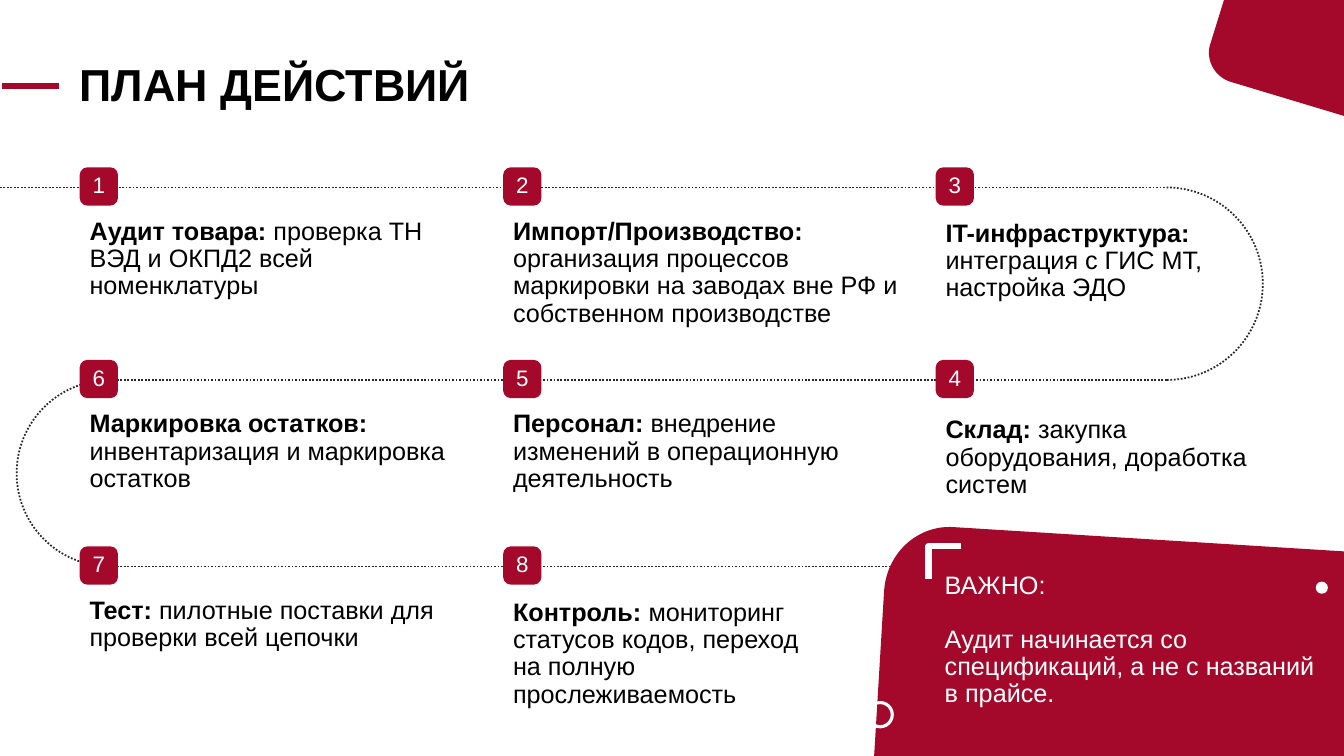
from dataclasses import dataclass

from lxml import etree
from pptx import Presentation
from pptx import util as u
from pptx.dml.color import RGBColor
from pptx.enum import dml, shapes, text
from pptx.oxml import ns


@dataclass(frozen=True)
class Theme:
    accent: RGBColor = RGBColor(0xA4, 0x09, 0x2B)
    ink: RGBColor = RGBColor(0, 0, 0)
    route: RGBColor = RGBColor(0x26, 0x26, 0x26)
    white: RGBColor = RGBColor(0xFF, 0xFF, 0xFF)
    font: str = "Arial"
    title_size: int = 32
    body_size: int = 18
    badge_size: int = 16
    spacing: float = 0.9


THEME = Theme()
WIDTH, HEIGHT = 13.33, 7.5
COLUMNS = (0.79, 4.99, 9.28)
ROWS = (1.66, 3.57, 5.42)
BADGE = 0.38
ROUTE_DROP = 0.2
ROUTE_RIGHT, ROUTE_LEFT = 11.57, 1.09  # centres of the two turns

# number, column, row, caption drop, caption width, heading, details
STEPS = (
    (1, 0, 0, 0.46, 3.98, "Аудит товара:", "проверка ТН ВЭД и ОКПД2 всей номенклатуры"),
    (2, 1, 0, 0.46, 4.18, "Импорт/Производство:",
     "организация процессов маркировки на заводах вне РФ и собственном производстве"),
    (3, 2, 0, 0.48, 3.02, "IT-инфраструктура:", "интеграция с ГИС МТ, настройка ЭДО"),
    (4, 2, 1, 0.52, 3.26, "Склад:", "закупка оборудования, доработка систем"),
    (5, 1, 1, 0.46, 3.94, "Персонал:", "внедрение изменений в операционную деятельность"),
    (6, 0, 1, 0.46, 3.83, "Маркировка остатков:", "инвентаризация и маркировка остатков"),
    (7, 0, 2, 0.46, 3.83, "Тест:", "пилотные поставки для проверки всей цепочки"),
    (8, 1, 2, 0.48, 3.35, "Контроль:",
     "мониторинг статусов кодов, переход на полную прослеживаемость"),
)


def box_of(*lengths):
    return [u.Inches(length) for length in lengths]


def place(shape, *box):
    shape.left, shape.top, shape.width, shape.height = box_of(*box)


def paint(shape, fill=None, line=None, weight=1.0, dash=None):
    shape.shadow.inherit = False
    if fill is None:
        shape.fill.background()
    else:
        shape.fill.solid()
        shape.fill.fore_color.rgb = fill
    if line is None:
        shape.line.fill.background()
    else:
        style_line(shape.line, line, weight, dash)


def style_line(line, color, weight, dash=None):
    line.color.rgb = color
    line.width = u.Pt(weight)
    if dash:
        line.dash_style = dash


def write(paragraph, words, size, color, bold=False):
    paragraph.text = words
    paragraph.line_spacing = THEME.spacing
    paragraph.space_before = u.Pt(0)
    style_run(paragraph.runs[0], size, color, bold)


def style_run(run, size, color, bold=False):
    run.font.name = THEME.font
    run.font.size = u.Pt(size)
    run.font.color.rgb = color
    run.font.bold = bold


def add_line(slide, start, end, color, weight, dash=None):
    line = slide.shapes.add_connector(shapes.MSO_CONNECTOR.STRAIGHT, *box_of(*start, *end))
    style_line(line.line, color, weight, dash)
    etree.SubElement(line._element.spPr, ns.qn("a:effectLst"))


def add_outline(slide, points, close=True):
    start, *rest = [tuple(box_of(*point)) for point in points]
    builder = slide.shapes.build_freeform(*start)
    builder.add_line_segments(rest, close=close)
    return builder.convert_to_shape()


def curve(a, b, c, d, steps=24):
    """Points along a cubic curve from a to d."""
    points = []
    for i in range(steps + 1):
        t = i / steps
        weights = ((1 - t) ** 3, 3 * t * (1 - t) ** 2, 3 * t * t * (1 - t), t ** 3)
        points.append(tuple(sum(w * p[axis] for w, p in zip(weights, (a, b, c, d)))
                            for axis in (0, 1)))
    return points


def add_route(slide):
    """Dotted path that winds through the three rows."""
    dash = dml.MSO_LINE.ROUND_DOT
    levels = [row + ROUTE_DROP for row in ROWS]
    for y, left, right in zip(levels, (0, ROUTE_LEFT, ROUTE_LEFT), (ROUTE_RIGHT, ROUTE_RIGHT, 9.22)):
        add_line(slide, (left, y), (right, y), THEME.route, 1.25, dash)
    # An arc angle unit here is 100000 / 60000 of a degree
    turns = ((ROUTE_RIGHT, levels[0], levels[1], 162, 54),
             (ROUTE_LEFT, levels[1], levels[2], 54, 162))
    for center, top, bottom, begin, finish in turns:
        size = bottom - top
        turn = slide.shapes.add_shape(
            shapes.MSO_SHAPE.ARC, *box_of(center - size / 2, top, size, size))
        turn.adjustments[0], turn.adjustments[1] = begin, finish
        paint(turn, line=THEME.route, weight=1.25, dash=dash)


def add_header(slide, left, top, width, height):
    """Title with its dash, and the corner block."""
    title = slide.shapes.title
    place(title, left, top, width, height)
    frame = title.text_frame
    frame.auto_size = text.MSO_AUTO_SIZE.NONE
    frame.vertical_anchor = text.MSO_ANCHOR.MIDDLE
    write(frame.paragraphs[0], "ПЛАН ДЕЙСТВИЙ", THEME.title_size, THEME.ink, True)
    frame.paragraphs[0].alignment = text.PP_ALIGN.LEFT
    dash_y = top + 0.28
    add_line(slide, (0.02, dash_y), (left - 0.1, dash_y), THEME.accent, 4.5)
    corner = curve((12.2, 0.81), (12.05, 0.76), (11.96, 0.6), (12, 0.45))
    paint(add_outline(slide, [(12.14, 0), (WIDTH, 0), (WIDTH, 1.15), *corner]), THEME.accent)


def add_step(slide, left, top, number, drop, width, heading, details):
    """Numbered badge with its caption below."""
    badge = slide.shapes.add_shape(
        shapes.MSO_SHAPE.ROUNDED_RECTANGLE, *box_of(left, top, BADGE, BADGE))
    badge.adjustments[0] = 0.2
    paint(badge, THEME.accent)
    frame = badge.text_frame
    frame.margin_left = frame.margin_right = frame.margin_top = frame.margin_bottom = 0
    frame.vertical_anchor = text.MSO_ANCHOR.MIDDLE
    write(frame.paragraphs[0], str(number), THEME.badge_size, THEME.white)
    frame.paragraphs[0].alignment = text.PP_ALIGN.CENTER

    caption = slide.shapes.add_textbox(*box_of(left, top + drop, width, 1.1)).text_frame
    caption.word_wrap = True
    paragraph = caption.paragraphs[0]
    write(paragraph, heading + " ", THEME.body_size, THEME.ink, True)
    run = paragraph.add_run()
    run.text = details
    style_run(run, THEME.body_size, THEME.ink)


def add_note(slide, left, top, width, height):
    """Red panel with ornaments and the important remark."""
    shoulder = curve((8.77, 5.85), (8.8, 5.48), (9.11, 5.2), (9.47, 5.23))
    panel = [*shoulder, (WIDTH, 5.47), (WIDTH, HEIGHT), (8.67, HEIGHT)]
    paint(add_outline(slide, panel), THEME.accent)
    x, y, arm = left - 0.06, top - 0.21, 0.32
    bracket = add_outline(slide, [(x, y + arm), (x, y), (x + arm, y)], close=False)
    paint(bracket, line=THEME.white, weight=4.5)
    oval = shapes.MSO_SHAPE.OVAL
    dot = slide.shapes.add_shape(oval, *box_of(left + 3.78, top + 0.14, 0.12, 0.12))
    paint(dot, THEME.white)
    ring = slide.shapes.add_shape(oval, *box_of(left - 0.66, top + 1.34, 0.24, 0.24))
    paint(ring, line=THEME.white, weight=2.25)

    remark = slide.placeholders[1]
    place(remark, left, top, width, height)
    remark.element.getparent().append(remark.element)  # bring above the panel
    frame = remark.text_frame
    frame.auto_size = text.MSO_AUTO_SIZE.NONE
    frame.vertical_anchor = text.MSO_ANCHOR.TOP
    lines = ("ВАЖНО:", "Аудит начинается со спецификаций, а не с названий в прайсе.")
    for i, line in enumerate(lines):
        paragraph = frame.add_paragraph() if i else frame.paragraphs[0]
        write(paragraph, line, THEME.body_size, THEME.white)
        properties = paragraph._p.get_or_add_pPr()
        properties.set("marL", "0")
        properties.set("indent", "0")
        etree.SubElement(properties, ns.qn("a:buNone"))
    frame.paragraphs[1].space_before = u.Pt(19)


def main():
    deck = Presentation()
    deck.slide_width, deck.slide_height = box_of(WIDTH, HEIGHT)
    slide = deck.slides.add_slide(deck.slide_layouts[1])
    add_route(slide)
    add_header(slide, 0.69, 0.57, 9.41, 0.58)
    for number, column, row, *caption in STEPS:
        add_step(slide, COLUMNS[column], ROWS[row], number, *caption)
    add_note(slide, 9.27, 5.63, 4.05, 1.87)
    deck.save("out.pptx")


if __name__ == "__main__":
    main()
